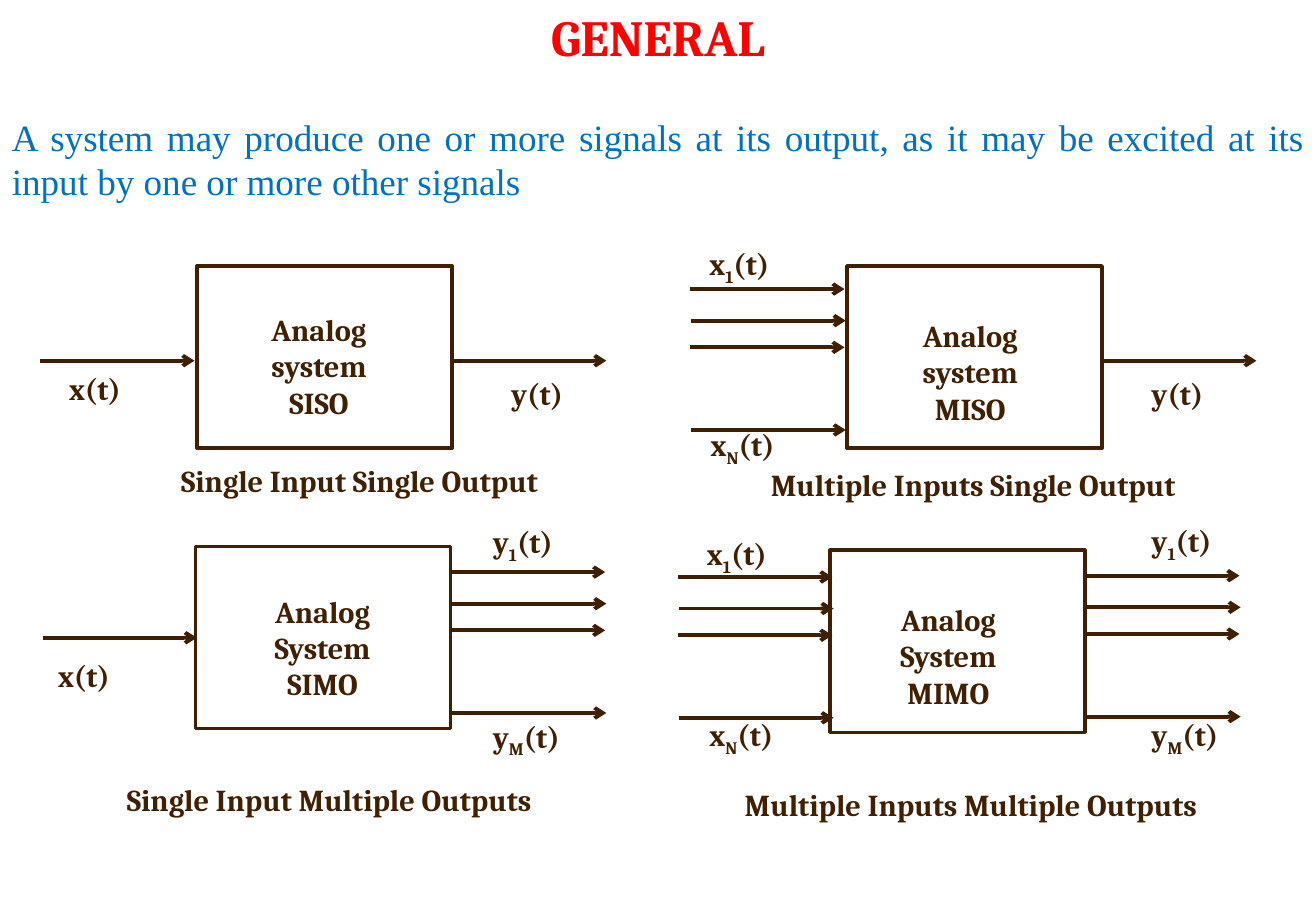
from lxml import etree
from pptx import Presentation
from pptx.dml.color import RGBColor
from pptx.enum.shapes import MSO_CONNECTOR, MSO_SHAPE
from pptx.enum.text import PP_ALIGN
from pptx.oxml.ns import qn
from pptx.util import Inches, Pt

LEFT, CENTER, JUSTIFY = PP_ALIGN.LEFT, PP_ALIGN.CENTER, PP_ALIGN.JUSTIFY
RECTANGLE, STRAIGHT = MSO_SHAPE.RECTANGLE, MSO_CONNECTOR.STRAIGHT
BROWN, ARROW_BROWN, RED, BLUE = "402000", "3F1F00", "FF0000", "0070C0"

SLIDE_W, SLIDE_H = 10.83, 7.5
BOX_W, BOX_H = 2.1, 1.5
ARROW_LENGTH = 1.27
SINGLE = [(0, 0)]
MULTIPLE = [(0, 0), (0.01, 0.26), (0, 0.48), (0.01, 1.16)]

TITLE = "GENERAL"
STATEMENT = ("A system may produce one or more signals at its output, "
             "as it may be excited at its input by one or more other signals")

SYSTEMS = [
    {"box": (1.62, 2.19),
     "name": (["Analog system", "SISO"], 1.75, 2.51),
     "caption": ("Single Input Single Output", 0.51, 3.76),
     "signals": [(SINGLE, 0.33, 2.97), (SINGLE, 3.72, 2.97)],
     "labels": [("x", "", 0.47, 3.0), ("y", "", 4.11, 3.04)]},
    {"box": (6.97, 2.19),
     "name": (["Analog system", "MISO"], 7.11, 2.56),
     "caption": ("Multiple Inputs Single Output", 5.56, 3.79),
     "signals": [(MULTIPLE, 5.68, 2.38), (SINGLE, 9.07, 2.97)],
     "labels": [("x", "1", 5.74, 1.97), ("x", "N", 5.75, 3.46),
                ("y", "", 9.38, 3.04)]},
    {"box": (1.61, 4.5),
     "name": (["Analog", "System", "SIMO"], 1.78, 4.83),
     "caption": ("Single Input Multiple Outputs", 0.26, 6.38),
     "signals": [(SINGLE, 0.35, 5.25), (MULTIPLE, 3.71, 4.71)],
     "labels": [("x", "", 0.38, 5.36),
                ("y", "1", 3.96, 4.26), ("y", "M", 3.96, 5.86)]},
    {"box": (6.83, 4.53),
     "name": (["Analog", "System", "MIMO"], 6.93, 4.9),
     "caption": ("Multiple Inputs Multiple Outputs", 5.54, 6.42),
     "signals": [(MULTIPLE, 5.58, 4.75), (MULTIPLE, 8.93, 4.74)],
     "labels": [("x", "1", 5.72, 4.36), ("x", "N", 5.74, 5.85),
                ("y", "1", 9.38, 4.25), ("y", "M", 9.38, 5.85)]},
]

prs = Presentation()
prs.slide_width, prs.slide_height = Inches(SLIDE_W), Inches(SLIDE_H)
slide = prs.slides.add_slide(prs.slide_layouts[6])


def paint(color_format, hex_color):
    color_format.rgb = RGBColor.from_string(hex_color)


def add_text(paragraphs, left, top, width, height, size=18, font="Cambria",
             color=BROWN, bold=True, align=LEFT):
    frame = slide.shapes.add_textbox(
        Inches(left), Inches(top), Inches(width), Inches(height)).text_frame
    frame.word_wrap = True
    for index, pieces in enumerate(paragraphs):
        paragraph = frame.add_paragraph() if index else frame.paragraphs[0]
        paragraph.alignment = align
        for piece, baseline in pieces:
            run = paragraph.add_run()
            run.text = piece
            run.font.size, run.font.name, run.font.bold = Pt(size), font, bold
            paint(run.font.color, color)
            if baseline:
                run.font._element.set("baseline", str(baseline * 1000))


def add_box(left, top):
    box = slide.shapes.add_shape(
        RECTANGLE, Inches(left), Inches(top), Inches(BOX_W), Inches(BOX_H))
    box.shadow.inherit = False
    box.fill.background()
    paint(box.line.color, BROWN)
    box.line.width = Pt(2)


def add_arrow(left, top):
    arrow = slide.shapes.add_connector(
        STRAIGHT, Inches(left), Inches(top),
        Inches(left + ARROW_LENGTH), Inches(top))
    paint(arrow.line.color, ARROW_BROWN)
    arrow.line.width = Pt(2.25)
    etree.SubElement(arrow.line._get_or_add_ln(), qn("a:tailEnd"), type="arrow")
    etree.SubElement(arrow._element.spPr, qn("a:effectLst"))


add_text([[(TITLE, 0)]], 0, 0, SLIDE_W, 0.61, size=30, color=RED, align=CENTER)
add_text([[(STATEMENT, 0)]], 0, 0.89, SLIDE_W, 0.84, size=22,
         font="Times New Roman", color=BLUE, bold=False, align=JUSTIFY)

for system in SYSTEMS:
    add_box(*system["box"])
    for offsets, left, top in system["signals"]:
        for dx, dy in offsets:
            add_arrow(left + dx, top + dy)
    name_lines, left, top = system["name"]
    add_text([[(line, 0)] for line in name_lines], left, top, 1.75, 1.01,
             align=CENTER)
    for letter, index, left, top in system["labels"]:
        pieces = ([(letter, 0), (index, -25), ("(t)", 0)] if index
                  else [(letter + "(t)", 0)])
        add_text([pieces], left, top, 1, 0.4)
    caption, left, top = system["caption"]
    add_text([[(caption, 0)]], left, top, 4.9, 0.4, align=CENTER)

prs.save("out.pptx")
